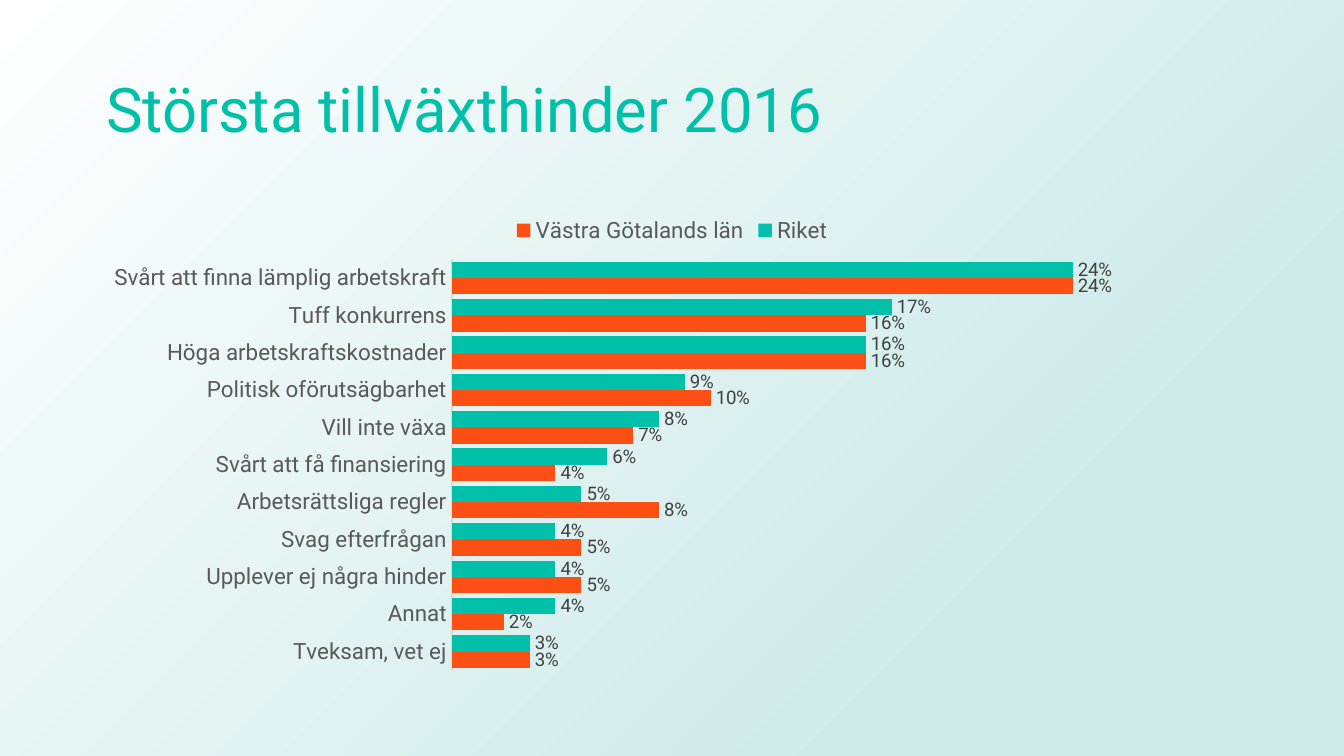
from lxml import etree
from pptx import Presentation
from pptx.chart.data import CategoryChartData
from pptx.dml.color import RGBColor
from pptx.enum.chart import XL_CHART_TYPE, XL_LABEL_POSITION, XL_LEGEND_POSITION, XL_TICK_MARK
from pptx.enum.shapes import MSO_SHAPE
from pptx.enum.text import MSO_ANCHOR
from pptx.oxml import parse_xml
from pptx.oxml.ns import nsdecls, qn
from pptx.util import Pt

EMU_PER_PX = 914400 / 134.4
WIDTH, HEIGHT = 1344, 756
FONT = "Roboto"
COLORS = {"teal": "00C0A9", "orange": "FB4F14", "mist": "CDEAE9", "white": "FFFFFF",
          "axis_text": "595959", "label_text": "404040", "axis_line": "D9D9D9"}


def px(*lengths):
    return [round(length * EMU_PER_PX) for length in lengths]


def add_text(text, box, size, color, anchor=MSO_ANCHOR.MIDDLE, line_spacing=0.9):
    frame = slide.shapes.add_textbox(*px(*box)).text_frame
    frame.word_wrap = True
    frame.vertical_anchor = anchor
    paragraph = frame.paragraphs[0]
    paragraph.line_spacing = line_spacing
    run = paragraph.add_run()
    run.text = text
    run.font.name, run.font.size = FONT, Pt(size)
    run.font.color.rgb = RGBColor.from_string(COLORS[color])


prs = Presentation()
prs.slide_width, prs.slide_height = px(WIDTH, HEIGHT)
slide = prs.slides.add_slide(prs.slide_layouts[6])

# Background: white corner fading to mist at the bottom right
backdrop = slide.shapes.add_shape(MSO_SHAPE.RECTANGLE, *px(0, 0, WIDTH, HEIGHT))
backdrop.shadow.inherit = False
backdrop.line.fill.background()
backdrop.fill.gradient()
for stop, position, color in zip(backdrop.fill.gradient_stops, (0.23, 1), ("mist", "white")):
    stop.position = position
    stop.color.rgb = RGBColor.from_string(COLORS[color])
gradient = backdrop.element.spPr.find(qn("a:gradFill"))
gradient.remove(gradient.find(qn("a:lin")))
radial = etree.SubElement(gradient, qn("a:path"), {"path": "circle"})
etree.SubElement(radial, qn("a:fillToRect"), {"l": "100000", "t": "100000"})
etree.SubElement(gradient, qn("a:tileRect"), {"r": "-100000", "b": "-100000"})

# Title
add_text("Största tillväxthinder 2016", (93, 40, 1158, 146), size=33, color="teal")

# Obstacles: national share, regional share
obstacles = [
    ("Svårt att finna lämplig arbetskraft", 0.24, 0.24),
    ("Tuff konkurrens", 0.17, 0.16),
    ("Höga arbetskraftskostnader", 0.16, 0.16),
    ("Politisk oförutsägbarhet", 0.09, 0.10),
    ("Vill inte växa", 0.08, 0.07),
    ("Svårt att få finansiering", 0.06, 0.04),
    ("Arbetsrättsliga regler", 0.05, 0.08),
    ("Svag efterfrågan", 0.04, 0.05),
    ("Upplever ej några hinder", 0.04, 0.05),
    ("Annat", 0.04, 0.02),
    ("Tveksam, vet ej", 0.03, 0.03),
]
names, national, regional = zip(*obstacles)
shares = CategoryChartData(number_format="0%")
shares.categories = names
shares.add_series("Riket", national)
shares.add_series("Västra Götalands län", regional)
chart = slide.shapes.add_chart(XL_CHART_TYPE.BAR_CLUSTERED, *px(93, 202, 1158, 478), shares).chart
chart.has_title = False
chart.font.name, chart.font.size = "Calibri", Pt(10)

# Legend and axes
chart.has_legend = True
chart.legend.position = XL_LEGEND_POSITION.TOP
chart.legend.include_in_layout = False
obstacle_axis, share_axis = chart.category_axis, chart.value_axis
obstacle_axis.reverse_order = True
obstacle_axis.major_tick_mark = XL_TICK_MARK.NONE
obstacle_axis.format.line.width = Pt(0.75)
obstacle_axis.format.line.color.rgb = RGBColor.from_string(COLORS["axis_line"])
share_axis.minimum_scale, share_axis.maximum_scale = 0, 0.3
share_axis.has_major_gridlines = False
share_axis.visible = False

# Bars and their labels
plot = chart.plots[0]
plot.gap_width, plot.overlap = 30, 0
plot.vary_by_categories = False
label_fonts = []
for series, color in zip(plot.series, ("teal", "orange")):
    series.format.fill.solid()
    series.format.fill.fore_color.rgb = RGBColor.from_string(COLORS[color])
    labels = series.data_labels
    labels.show_value = True
    labels.number_format, labels.number_format_is_linked = "0%", False
    labels.position = XL_LABEL_POSITION.OUTSIDE_END
    label_fonts.append((labels.font, 10, "label_text"))

# Chart fonts
for font, size, color in [(chart.legend.font, 12, "axis_text"),
                          (obstacle_axis.tick_labels.font, 12, "axis_text"), *label_fonts]:
    font.name, font.size = FONT, Pt(size)
    font.color.rgb = RGBColor.from_string(COLORS[color])

# Plot area as fractions of the chart
plot_area = chart.element.find(qn("c:chart")).find(qn("c:plotArea"))
for old_layout in plot_area.findall(qn("c:layout")):
    plot_area.remove(old_layout)
layout = parse_xml(f'<c:layout {nsdecls("c")}><c:manualLayout/></c:layout>')
for tag, value in [("layoutTarget", "inner"), ("xMode", "edge"), ("yMode", "edge"),
                   ("x", 0.31), ("y", 0.12), ("w", 0.67), ("h", 0.86)]:
    etree.SubElement(layout[0], qn(f"c:{tag}"), {"val": str(value)})
plot_area.insert(0, layout)

prs.save("out.pptx")
